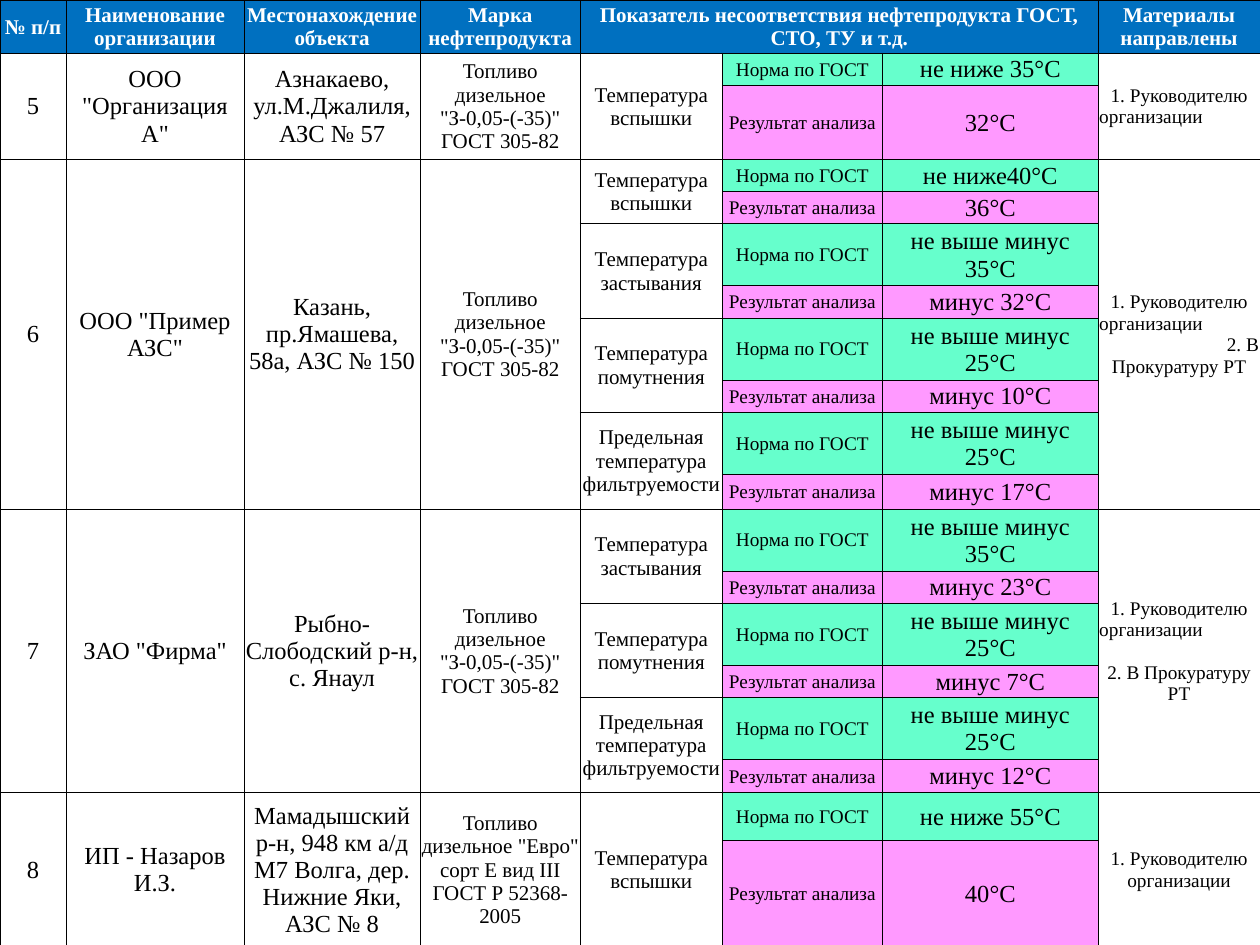
from dataclasses import dataclass

from lxml.etree import SubElement
from pptx import Presentation
from pptx.dml.color import RGBColor
from pptx.enum.text import MSO_ANCHOR, PP_ALIGN
from pptx.oxml.ns import qn
from pptx.table import Table, _Cell
from pptx.util import Cm, Pt

COLORS = {"header": "0070C0", "norm": "66FFCC", "result": "FF99FF",
          "white": "FFFFFF", "black": "000000"}
FONT = "Times New Roman"
CELL_FORMAT = {"margin_left": Cm(0.02), "margin_right": Cm(0.02),
               "margin_top": Cm(0.02), "margin_bottom": Cm(0),
               "vertical_anchor": MSO_ANCHOR.MIDDLE}
COLUMN_WIDTHS = [1.33, 3.59, 3.55, 3.23, 2.86, 3.23, 4.35, 3.26]
HEADER_HEIGHT, SINGLE, DOUBLE = 1.07, 0.65, 1.25
INDICATOR, LABEL, VALUE, RECIPIENTS = 4, 5, 6, 7


@dataclass
class Line:
    text: str
    align: PP_ALIGN = PP_ALIGN.CENTER
    space_before: float = 0


@dataclass
class Indicator:
    name: str
    norm: str
    result: str
    norm_height: float = DOUBLE
    result_height: float = SINGLE


@dataclass
class Violation:
    number: str
    organization: str
    location: str
    fuel: str
    indicators: list[Indicator]
    recipients: list[Line]


HEADERS = {0: "№ п/п", 1: "Наименование организации", 2: "Местонахождение объекта",
           3: "Марка нефтепродукта",
           INDICATOR: "Показатель несоответствия нефтепродукта ГОСТ, СТО, ТУ и т.д.",
           RECIPIENTS: "Материалы направлены"}
WINTER_DIESEL = 'Топливо\vдизельное\v"З-0,05-(-35)"\vГОСТ 305-82'
FLASH, FREEZING = "Температура вспышки", "Температура застывания"
CLOUDING, FILTERING = "Температура помутнения", "Предельная температура фильтруемости"
MANAGER = [Line("1. Руководителю"), Line("организации", PP_ALIGN.LEFT)]

VIOLATIONS = [
    Violation(
        "5", 'ООО "Организация А"', "Азнакаево, ул.М.Джалиля, АЗС № 57", WINTER_DIESEL,
        [Indicator(FLASH, "не ниже 35°С", "32°С", SINGLE, 1.49)], MANAGER),
    Violation(
        "6", 'ООО "Пример АЗС"', "Казань, пр.Ямашева, 58а, АЗС № 150", WINTER_DIESEL,
        [Indicator(FLASH, "не ниже40°С", "36°С", SINGLE),
         Indicator(FREEZING, "не выше минус 35°С", "минус 32°С"),
         Indicator(CLOUDING, "не выше минус 25°С", "минус 10°С"),
         Indicator(FILTERING, "не выше минус 25°С", "минус 17°С", result_height=0.7)],
        MANAGER + [Line("2. В", PP_ALIGN.RIGHT), Line("Прокуратуру РТ")]),
    Violation(
        "7", 'ЗАО "Фирма"', "Рыбно-Слободский р-н, с. Янаул", WINTER_DIESEL,
        [Indicator(FREEZING, "не выше минус 35°С", "минус 23°С"),
         Indicator(CLOUDING, "не выше минус 25°С", "минус 7°С"),
         Indicator(FILTERING, "не выше минус 25°С", "минус 12°С", result_height=0.67)],
        MANAGER + [Line("2. В Прокуратуру РТ", space_before=12)]),
    Violation(
        "8", "ИП - Назаров И.З.",
        "Мамадышский р-н, 948 км а/д М7 Волга, дер. Нижние Яки, АЗС № 8",
        'Топливо дизельное "Евро" сорт Е вид III ГОСТ Р 52368-2005',
        [Indicator(FLASH, "не ниже 55°С", "40°С", 0.97, 2.13)],
        [Line("1. Руководителю организации")]),
]


def draw_borders(cell: _Cell) -> None:
    properties = cell._tc.get_or_add_tcPr()
    for side in ("a:lnL", "a:lnR", "a:lnT", "a:lnB"):
        border = SubElement(properties, qn(side), w=str(Pt(0.5)))
        fill = SubElement(border, qn("a:solidFill"))
        SubElement(fill, qn("a:srgbClr"), val=COLORS["black"])


def write(cell: _Cell, lines: list[Line], size: int, fill: str = "white",
          color: str = "black", bold: bool = False) -> None:
    cell.fill.solid()
    cell.fill.fore_color.rgb = RGBColor.from_string(COLORS[fill])
    font_format = {"name": FONT, "size": Pt(size), "bold": bold}
    frame = cell.text_frame
    for position, line in enumerate(lines):
        paragraph = frame.paragraphs[0] if position == 0 else frame.add_paragraph()
        paragraph.text = line.text
        paragraph.alignment = line.align
        paragraph.space_before = Pt(line.space_before)
        for run in paragraph.runs:
            for name, value in font_format.items():
                setattr(run.font, name, value)
            run.font.color.rgb = RGBColor.from_string(COLORS[color])


def write_merged(grid: Table, top: int, column: int, rows: int,
                 lines: list[Line], size: int) -> None:
    cell = grid.cell(top, column)
    cell.merge(grid.cell(top + rows - 1, column))
    write(cell, lines, size)


def draw_violation(grid: Table, top: int, violation: Violation) -> int:
    """Fill the rows of one violation and return the next free row."""
    rows = 2 * len(violation.indicators)
    details = [(violation.number, 14), (violation.organization, 14),
               (violation.location, 14), (violation.fuel, 12)]
    for column, (text, size) in enumerate(details):
        write_merged(grid, top, column, rows, [Line(text)], size)
    write_merged(grid, top, RECIPIENTS, rows, violation.recipients, 11)
    for index, indicator in enumerate(violation.indicators):
        first = top + 2 * index
        write_merged(grid, first, INDICATOR, 2, [Line(indicator.name)], 12)
        measures = [("Норма по ГОСТ", indicator.norm, "norm", indicator.norm_height),
                    ("Результат анализа", indicator.result, "result",
                     indicator.result_height)]
        for row, (label, value, fill, height) in enumerate(measures, first):
            grid.rows[row].height = Cm(height)
            write(grid.cell(row, LABEL), [Line(label)], 11, fill)
            write(grid.cell(row, VALUE), [Line(value)], 14, fill)
    return top + rows


def main() -> None:
    presentation = Presentation()
    presentation.slide_width, presentation.slide_height = Cm(25.4), Cm(19.05)
    slide = presentation.slides.add_slide(presentation.slide_layouts[6])
    row_count = 1 + sum(2 * len(violation.indicators) for violation in VIOLATIONS)
    grid = slide.shapes.add_table(row_count, len(COLUMN_WIDTHS), Cm(0), Cm(0),
                                  Cm(25.4), Cm(19.05)).table
    grid.first_row = grid.horz_banding = False
    for column, width in zip(grid.columns, COLUMN_WIDTHS):
        column.width = Cm(width)
    for cell in grid.iter_cells():
        draw_borders(cell)
        for name, value in CELL_FORMAT.items():
            setattr(cell, name, value)

    grid.rows[0].height = Cm(HEADER_HEIGHT)
    grid.cell(0, INDICATOR).merge(grid.cell(0, VALUE))
    for column, title in HEADERS.items():
        write(grid.cell(0, column), [Line(title)], 12, "header", "white", True)
    next_row = 1
    for violation in VIOLATIONS:
        next_row = draw_violation(grid, next_row, violation)
    presentation.save("out.pptx")


if __name__ == "__main__":
    main()
